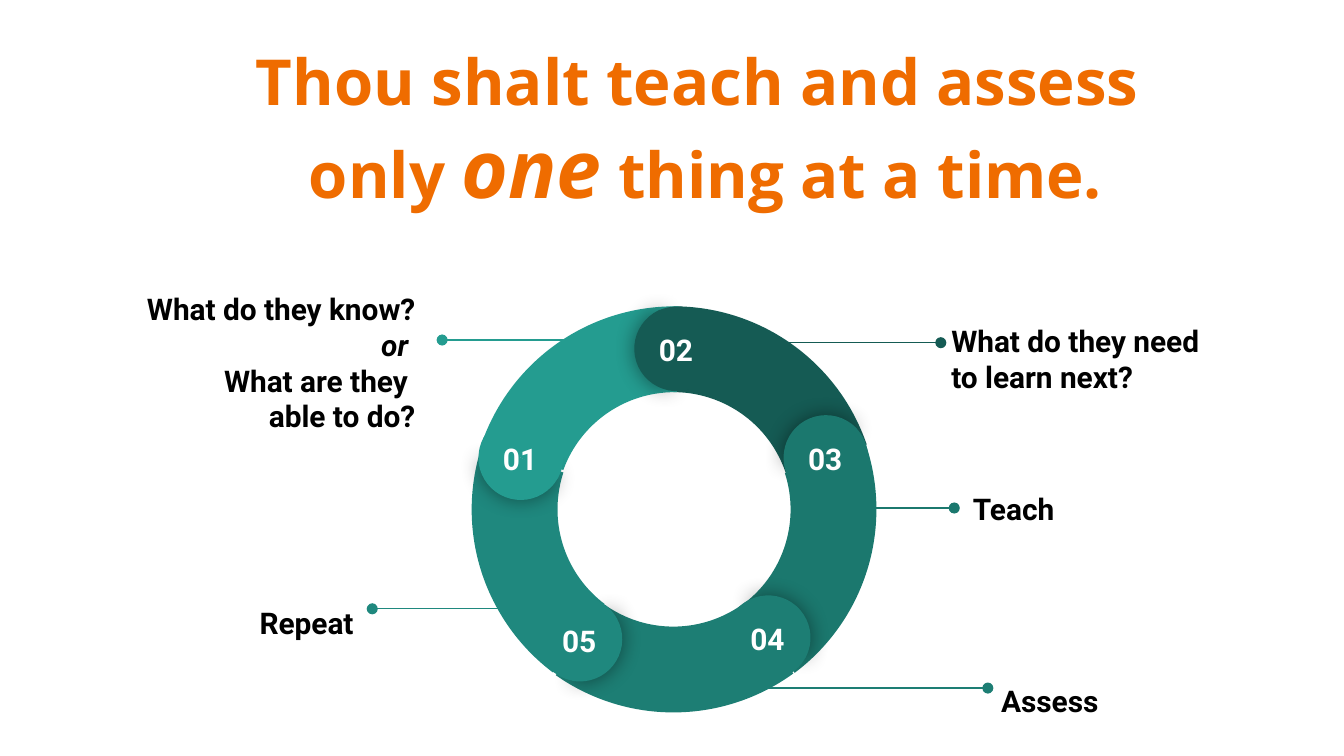
from lxml.etree import SubElement
from pptx import Presentation
from pptx.dml.color import RGBColor
from pptx.enum.shapes import MSO_CONNECTOR, MSO_SHAPE
from pptx.enum.text import MSO_ANCHOR, MSO_AUTO_SIZE, PP_ALIGN
from pptx.oxml.ns import qn
from pptx.util import Inches, Pt

ORANGE = RGBColor(0xEF, 0x6C, 0x00)
BLACK = RGBColor(0x00, 0x00, 0x00)
WHITE = RGBColor(0xFF, 0xFF, 0xFF)
COLORS = {
    "01": RGBColor(0x24, 0x9C, 0x90),
    "02": RGBColor(0x15, 0x5B, 0x54),
    "03": RGBColor(0x1B, 0x78, 0x6E),
    "04": RGBColor(0x1D, 0x7E, 0x74),
    "05": RGBColor(0x1F, 0x88, 0x7E),
}

FRAME_FORMAT = {
    "word_wrap": True,
    "auto_size": MSO_AUTO_SIZE.NONE,
    "margin_left": Inches(0.1),
    "margin_right": Inches(0.1),
    "margin_top": Inches(0.1),
    "margin_bottom": Inches(0.1),
}
LABEL_FONT = {"name": "Roboto", "size": Pt(16), "bold": True}
TITLE_FONT = {"name": "Open Sans", "size": Pt(34), "bold": True}
TITLE_EMPHASIS = {**TITLE_FONT, "size": Pt(43), "italic": True}
TITLE_LINES = [
    [("Thou shalt teach and assess ", TITLE_FONT)],
    [("only ", TITLE_FONT), ("one", TITLE_EMPHASIS), (" thing at a time.", TITLE_FONT)],
]

ARCS = {
    "05": (3.51, 2.27, 277),
    "03": (3.48, 2.27, 132),
    "02": (3.49, 2.28, 60),
    "04": (3.49, 2.26, 204),
    "01": (3.50, 2.28, 350),
}
CAPS = {
    "03": (5.83, 3.09, 67.1),
    "05": (4.00, 4.44, 211.1),
    "02": (4.72, 2.28, 357.1),
    "04": (5.40, 4.43, 139.1),
    "01": (3.56, 3.09, 284.1),
}
RING_ORDER = [
    ("arc", "05"), ("arc", "03"), ("arc", "02"), ("cap", "03"), ("arc", "04"),
    ("cap", "05"), ("arc", "01"), ("cap", "02"), ("cap", "04"), ("cap", "01"),
]
ARC_SIZE = 3.04
CAP_SIZE = 0.63
ARC_ANGLES = (126.03, 168.68, 0.21)
SHADED_HALF = (61.9, 149.96)
PLAIN_HALF = (40.28, 171.84)

LEADERS = [
    ("01", 4.29, 3.29, 2.53),
    ("05", 3.79, 2.77, 4.53),
    ("04", 5.34, 7.35, 5.12),
    ("03", 6.14, 7.10, 3.78),
    ("02", 5.59, 7.00, 2.55),
]
LABELS = [
    (["What do they know?", "or ", "What are they ", "able to do?"],
     (0.79, 2.19, 2.40, 1.01), PP_ALIGN.RIGHT),
    (["Repeat"], (1.13, 4.13, 1.60, 1.01), PP_ALIGN.RIGHT),
    (["Assess"], (7.35, 4.71, 2.65, 1.01), PP_ALIGN.LEFT),
    (["Teach"], (7.14, 3.28, 2.32, 1.01), PP_ALIGN.LEFT),
    (["What do they need", "to learn next?"], (6.98, 2.26, 2.18, 0.82), PP_ALIGN.LEFT),
]


def apply_format(target, values):
    for name, value in values.items():
        setattr(target, name, value)


def add_run(paragraph, text, font_format, color):
    run = paragraph.add_run()
    run.text = text
    apply_format(run.font, font_format)
    run.font.color.rgb = color


def fill_frame(frame, lines, anchor, alignment, color):
    apply_format(frame, {**FRAME_FORMAT, "vertical_anchor": anchor})
    for index, runs in enumerate(lines):
        paragraph = frame.add_paragraph() if index else frame.paragraphs[0]
        paragraph.alignment = alignment
        for text, font_format in runs:
            add_run(paragraph, text, font_format, color)


def add_title(slide):
    title = slide.shapes.title
    box = {"left": 0.34, "top": 0.21, "width": 9.32, "height": 0.77}
    apply_format(title, {name: Inches(value) for name, value in box.items()})
    fill_frame(title.text_frame, TITLE_LINES, MSO_ANCHOR.TOP, PP_ALIGN.CENTER, ORANGE)
    for paragraph in title.text_frame.paragraphs:
        properties = paragraph._p.get_or_add_pPr()
        properties.set("marL", str(Inches(0.5)))
        properties.set("indent", "0")


def add_text(slide, lines, box, alignment, anchor, color):
    shape = slide.shapes.add_textbox(*map(Inches, box))
    runs = [[(line, {**LABEL_FONT, "italic": line.strip() == "or"})] for line in lines]
    fill_frame(shape.text_frame, runs, anchor, alignment, color)


def add_leader(slide, number, start, end, height):
    connector = slide.shapes.add_connector(
        MSO_CONNECTOR.STRAIGHT, *map(Inches, (start, height, end, height)))
    connector.line.color.rgb = COLORS[number]
    connector.line.width = Pt(0.75)
    SubElement(connector.line._get_or_add_ln(), qn("a:tailEnd"), type="oval")
    SubElement(connector._element.spPr, qn("a:effectLst"))


def add_segment(slide, kind, box, rotation, adjustments, color):
    shape = slide.shapes.add_shape(kind, *map(Inches, box))
    shape.rotation = rotation % 360
    for index, value in enumerate(adjustments):
        shape.adjustments[index] = value
    shape.fill.solid()
    shape.fill.fore_color.rgb = color
    shape.line.fill.background()
    shape.shadow.inherit = False
    return shape


def add_soft_shadow(shape):
    effects = shape._element.spPr.find(qn("a:effectLst"))
    shadow = SubElement(effects, qn("a:outerShdw"), blurRad=str(Pt(11.2)),
                        dist="0", dir="0", algn="ctr", rotWithShape="0")
    color = SubElement(shadow, qn("a:srgbClr"), val=str(BLACK))
    SubElement(color, qn("a:alpha"), val="43000")


def add_arc(slide, number):
    left, top, rotation = ARCS[number]
    add_segment(slide, MSO_SHAPE.BLOCK_ARC, (left, top, ARC_SIZE, ARC_SIZE),
                rotation, ARC_ANGLES, COLORS[number])


def add_cap(slide, number):
    left, top, rotation = CAPS[number]
    box = (left, top, CAP_SIZE, CAP_SIZE)
    color = COLORS[number]
    add_soft_shadow(add_segment(slide, MSO_SHAPE.PIE, box, rotation, SHADED_HALF, color))
    add_segment(slide, MSO_SHAPE.PIE, box, rotation + 179.3, PLAIN_HALF, color)


def add_ring(slide):
    builders = {"arc": add_arc, "cap": add_cap}
    for kind, number in RING_ORDER:
        builders[kind](slide, number)
    for number, (left, top, _) in CAPS.items():
        add_text(slide, [number], (left + 0.03, top + 0.09, 0.56, 0.29),
                 PP_ALIGN.CENTER, MSO_ANCHOR.TOP, WHITE)


def main():
    presentation = Presentation()
    presentation.slide_width = Inches(10)
    presentation.slide_height = Inches(10) * 9 // 16
    slide = presentation.slides.add_slide(presentation.slide_layouts[5])
    add_title(slide)
    for leader in LEADERS:
        add_leader(slide, *leader)
    for lines, box, alignment in LABELS:
        add_text(slide, lines, box, alignment, MSO_ANCHOR.MIDDLE, BLACK)
    add_ring(slide)
    presentation.save("out.pptx")


if __name__ == "__main__":
    main()
